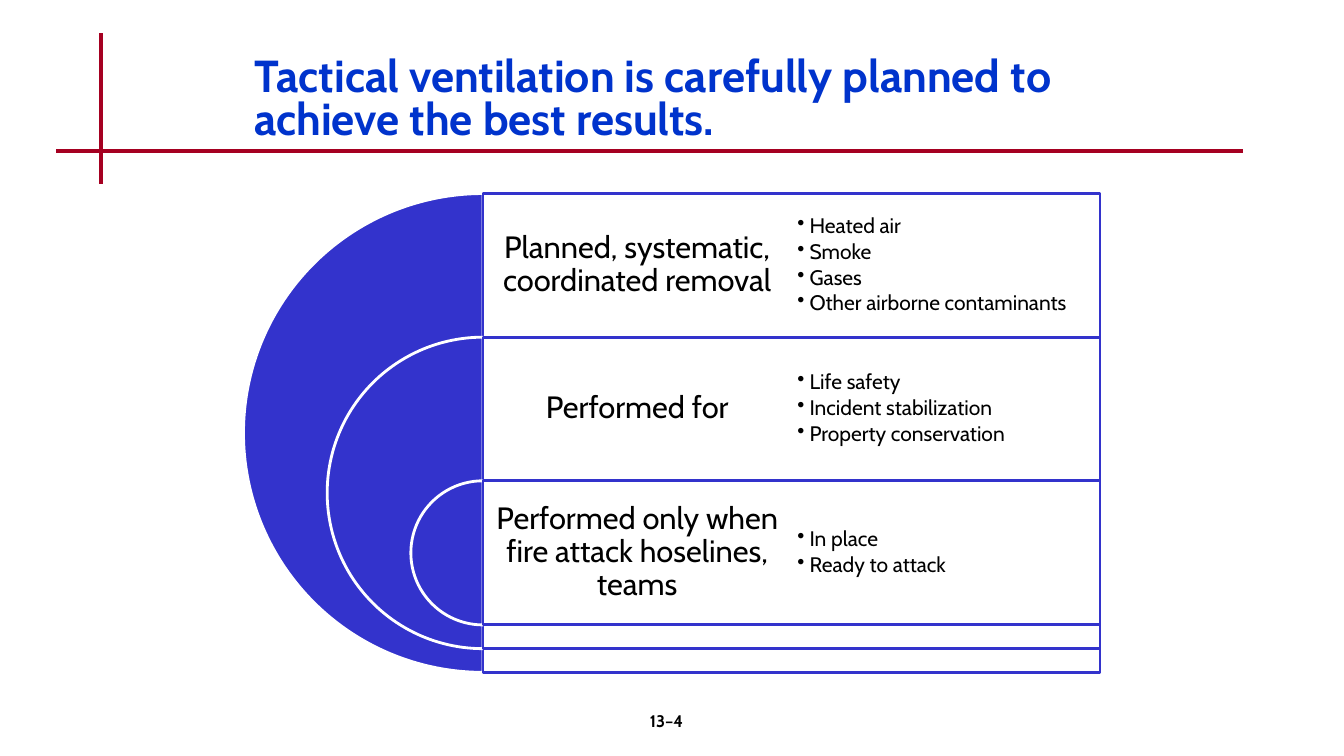
import pptx
import pptx.util
import pptx.dml.color
import pptx.enum.shapes
import pptx.enum.text
import pptx.oxml
import pptx.oxml.ns

Inches = pptx.util.Inches
Pt = pptx.util.Pt
PP_ALIGN = pptx.enum.text.PP_ALIGN
ANCHOR = pptx.enum.text.MSO_ANCHOR
SHAPE = pptx.enum.shapes.MSO_SHAPE
NS = pptx.oxml.ns.nsdecls("a")


def paint(color_format, hex_color):
    color_format.rgb = pptx.dml.color.RGBColor.from_string(hex_color)


def write(paragraph, text, size, color="000000", bold=False):
    run = paragraph.add_run()
    run.text = text
    run.font.name = "Cabin"
    run.font.size = Pt(size)
    run.font.bold = bold
    paint(run.font.color, color)


deck = pptx.Presentation()
deck.slide_width = Inches(13.33)
deck.slide_height = Inches(7.5)
slide = deck.slides.add_slide(deck.slide_layouts[5])
shapes = slide.shapes

for x1, y1, x2, y2 in [(1, 0.33, 1, 1.83), (0.56, 1.5, 12.33, 1.5)]:
    rule = shapes.add_connector(
        pptx.enum.shapes.MSO_CONNECTOR.STRAIGHT,
        Inches(x1), Inches(y1), Inches(x2), Inches(y2))
    paint(rule.line.color, "A50021")
    rule.line.width = Pt(3)
    rule._element.spPr.append(pptx.oxml.parse_xml(f"<a:effectLst {NS}/>"))

title = shapes.title
title.left, title.top = Inches(2.42), Inches(0.5)
title.width, title.height = Inches(8.5), Inches(1)
title.text_frame.vertical_anchor = ANCHOR.MIDDLE
headline = title.text_frame.paragraphs[0]
headline.alignment = PP_ALIGN.LEFT
headline.line_spacing = 0.8
write(headline, "Tactical ventilation is carefully planned to achieve the best results.",
      32, "0033CC", True)

page_number = shapes.add_textbox(Inches(5.22), Inches(7), Inches(2.78), Inches(0.5))
page_number.text_frame.word_wrap = True
page_line = page_number.text_frame.paragraphs[0]
page_line.alignment = PP_ALIGN.CENTER
write(page_line, "13–4", 12, bold=True)

topics = [
    ("Planned, systematic, coordinated removal",
     ["Heated air", "Smoke", "Gases", "Other airborne contaminants"]),
    ("Performed for", ["Life safety", "Incident stabilization", "Property conservation"]),
    ("Performed only when fire attack hoselines, teams", ["In place", "Ready to attack"]),
]
AXIS, TOP, COLUMN = 4.79, 1.92, 3.06
DIAMETER, SHRINK = 4.75, 1.66
ROW = DIAMETER * 0.3

for level, (topic, details) in enumerate(topics):
    top = TOP + level * ROW
    size = DIAMETER - level * SHRINK

    half_disc = shapes.add_shape(
        SHAPE.PIE, Inches(AXIS - size / 2), Inches(top), Inches(size), Inches(size))
    half_disc.adjustments[0] = 54
    half_disc.adjustments[1] = 162
    panel = shapes.add_shape(
        SHAPE.RECTANGLE, Inches(AXIS), Inches(top), Inches(2 * COLUMN), Inches(size))
    for part, fill, outline in [(half_disc, "3333CC", "FFFFFF"), (panel, "FFFFFF", "3333CC")]:
        part.shadow.inherit = False
        part.fill.solid()
        paint(part.fill.fore_color, fill)
        paint(part.line.color, outline)
        part.line.width = Pt(2)
    panel_color = panel._element.spPr.find(
        pptx.oxml.ns.qn("a:solidFill")).find(pptx.oxml.ns.qn("a:srgbClr"))
    panel_color.append(pptx.oxml.parse_xml(f'<a:alpha {NS} val="90000"/>'))

    cells = [([topic], 22, 0.09, 7.7, False), (details, 15, 0.06, 2.25, True)]
    for column, (lines, font_size, inset, gap, bulleted) in enumerate(cells):
        cell = shapes.add_textbox(
            Inches(AXIS + column * COLUMN), Inches(top), Inches(COLUMN), Inches(ROW))
        frame = cell.text_frame
        frame.word_wrap = True
        frame.vertical_anchor = ANCHOR.MIDDLE
        frame.margin_left = frame.margin_right = Inches(inset)
        frame.margin_top = frame.margin_bottom = Inches(inset)
        for index, text in enumerate(lines):
            paragraph = frame.add_paragraph() if index else frame.paragraphs[0]
            paragraph.line_spacing = 0.9
            paragraph.space_after = Pt(gap)
            if bulleted:
                paragraph.level = 1
                properties = paragraph._p.get_or_add_pPr()
                properties.set("marL", str(Inches(0.12)))
                properties.set("indent", str(-Inches(0.12)))
                properties.append(pptx.oxml.parse_xml(f'<a:buChar {NS} char="•"/>'))
            else:
                paragraph.alignment = PP_ALIGN.CENTER
            write(paragraph, text, font_size)

deck.save("out.pptx")
